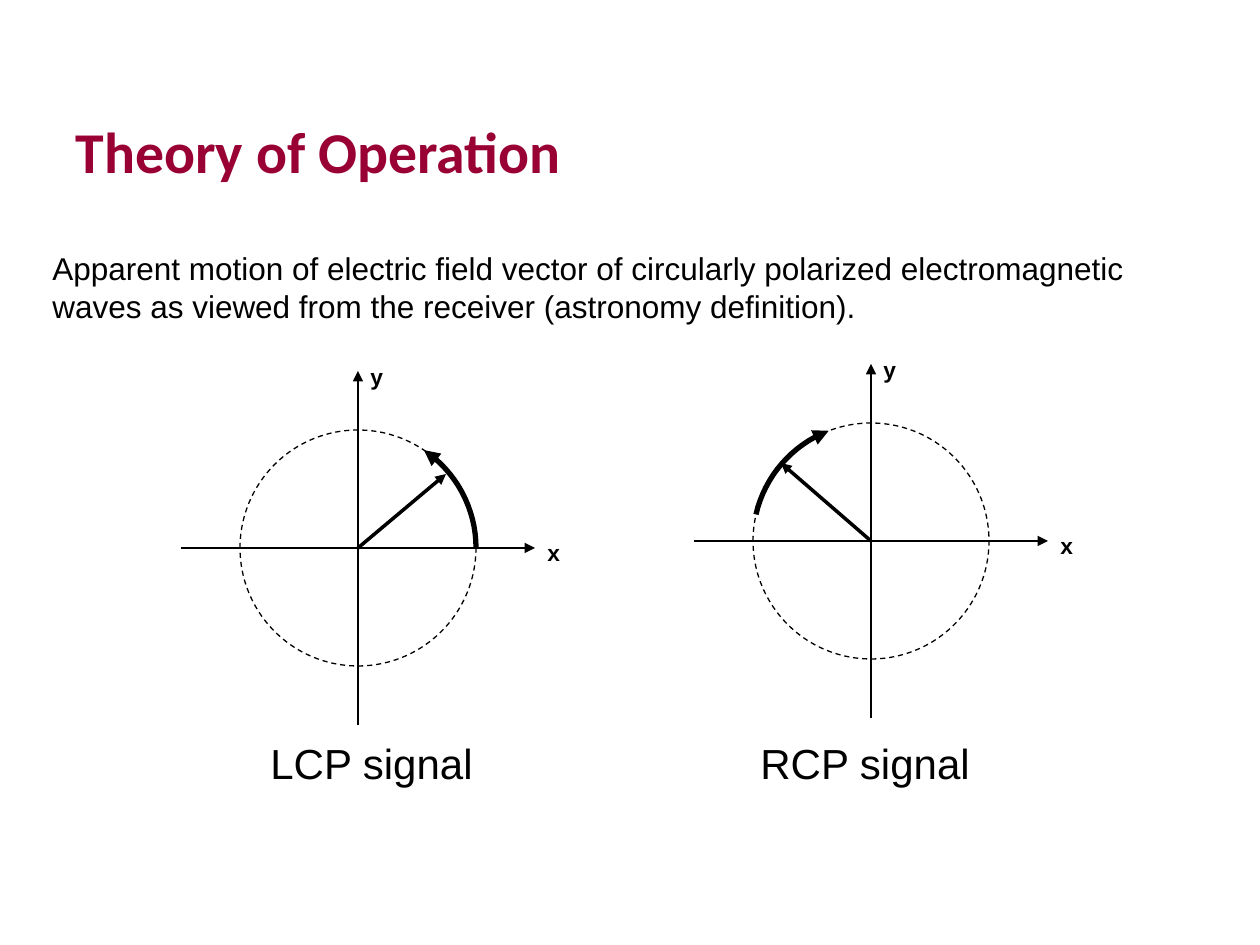
from math import cos, radians, sin

from pptx import Presentation
from pptx.dml.color import RGBColor
from pptx.enum.dml import MSO_LINE_DASH_STYLE as Dash
from pptx.enum.shapes import MSO_CONNECTOR as Link, MSO_SHAPE as Form
from pptx.enum.text import MSO_ANCHOR as Anchor, PP_ALIGN as Align
from pptx.oxml.xmlchemy import OxmlElement as Element
from pptx.util import Pt

SCALE = 914400 / 126
RADIUS = 118
REACH = 177
BLACK = "000000"


def px(*nums):
    """Turn pixel lengths into a list of EMU."""
    return [round(num * SCALE) for num in nums]


def paint(part, color):
    """Give a fill or line fill a solid colour."""
    part.solid()
    part.fore_color.rgb = RGBColor.from_string(color)


def style(para, size, font="Arial", color=BLACK, bold=False):
    """Set the font of a paragraph."""
    para.alignment = Align.LEFT
    para.font.size = Pt(size)
    para.font.name = font
    para.font.bold = bold
    paint(para.font.fill, color)


def stroke(shape, width, arrow=True):
    """Set a black line, with an arrowhead at its end if wanted."""
    paint(shape.line.fill, BLACK)
    shape.line.width = Pt(width)
    if arrow:
        tip = Element("a:tailEnd")
        tip.set("type", "triangle")
        shape.line._get_or_add_ln().append(tip)


def add_title(slide, text, box):
    """Place and format the title."""
    title = slide.shapes.title
    title.left, title.top, title.width, title.height = px(*box)
    title.text_frame.text = text
    title.text_frame.vertical_anchor = Anchor.MIDDLE
    style(title.text_frame.paragraphs[0], 33, "Calibri", "990033", True)


def add_text(shapes, text, box, size, bold=False, wrap=True):
    """Add a text box with one paragraph."""
    frame = shapes.add_textbox(*px(*box)).text_frame
    frame.word_wrap = wrap
    frame.text = text
    style(frame.paragraphs[0], size, bold=bold)


def add_arrow(shapes, start, end, width):
    """Add a straight arrow without a shadow."""
    arrow = shapes.add_connector(Link.STRAIGHT, *px(*start, *end))
    stroke(arrow, width)
    arrow._element.spPr.append(Element("a:effectLst"))


def add_circle(shapes, x, y):
    """Add the dashed circle round a centre."""
    size = 2 * RADIUS
    ring = shapes.add_shape(Form.OVAL, *px(x - RADIUS, y - RADIUS, size, size))
    ring.shadow.inherit = False
    paint(ring.fill, "FFFFFF")
    stroke(ring, 0.75, False)
    ring.line.dash_style = Dash.DASH


def add_arc(shapes, x, y, first, last, steps=16):
    """Add a thick arrow along the circle between two angles."""
    turns = [radians(first + (last - first) * i / steps) for i in range(steps + 1)]
    points = [px(x + RADIUS * cos(a), y - RADIUS * sin(a)) for a in turns]
    path = shapes.build_freeform(*points[0])
    path.add_line_segments(points[1:], close=False)
    arc = path.convert_to_shape()
    arc.shadow.inherit = False
    arc.fill.background()
    stroke(arc, 3)


def add_plot(slide, x, y, tip, span):
    """Add a group with circle, axes, field vector and turning arrow."""
    shapes = slide.shapes.add_group_shape().shapes
    add_circle(shapes, x, y)
    add_arrow(shapes, (x, y + REACH), (x, y - REACH), 0.75)
    add_arrow(shapes, (x - REACH, y), (x + REACH, y), 0.75)
    add_arrow(shapes, (x, y), (x + tip[0], y + tip[1]), 2)
    add_arc(shapes, x, y, *span)
    add_text(shapes, "y", (x, y - 191, 44, 44), 13, True)
    add_text(shapes, "x", (x + REACH, y - 15, 44, 44), 13, True)


def main():
    """Build and save the slide."""
    deck = Presentation()
    deck.slide_width, deck.slide_height = px(1260, 945)
    slide = deck.slides.add_slide(deck.slide_layouts[5])
    add_title(slide, "Theory of Operation", (63, 71, 1134, 158))
    add_plot(slide, 358, 548, (88, -74), (0, 56))
    add_plot(slide, 871, 541, (-90, -78), (167, 111))
    add_text(
        slide.shapes,
        "Apparent motion of electric field vector of circularly polarized "
        "electromagnetic waves as viewed from the receiver (astronomy definition).",
        (40, 243, 1173, 89), 18)
    for name, left, width in (("LCP", 258, 242), ("RCP", 748, 237)):
        add_text(slide.shapes, f"{name} signal", (left, 731, width, 64), 24, wrap=False)
    deck.save("out.pptx")


if __name__ == "__main__":
    main()
